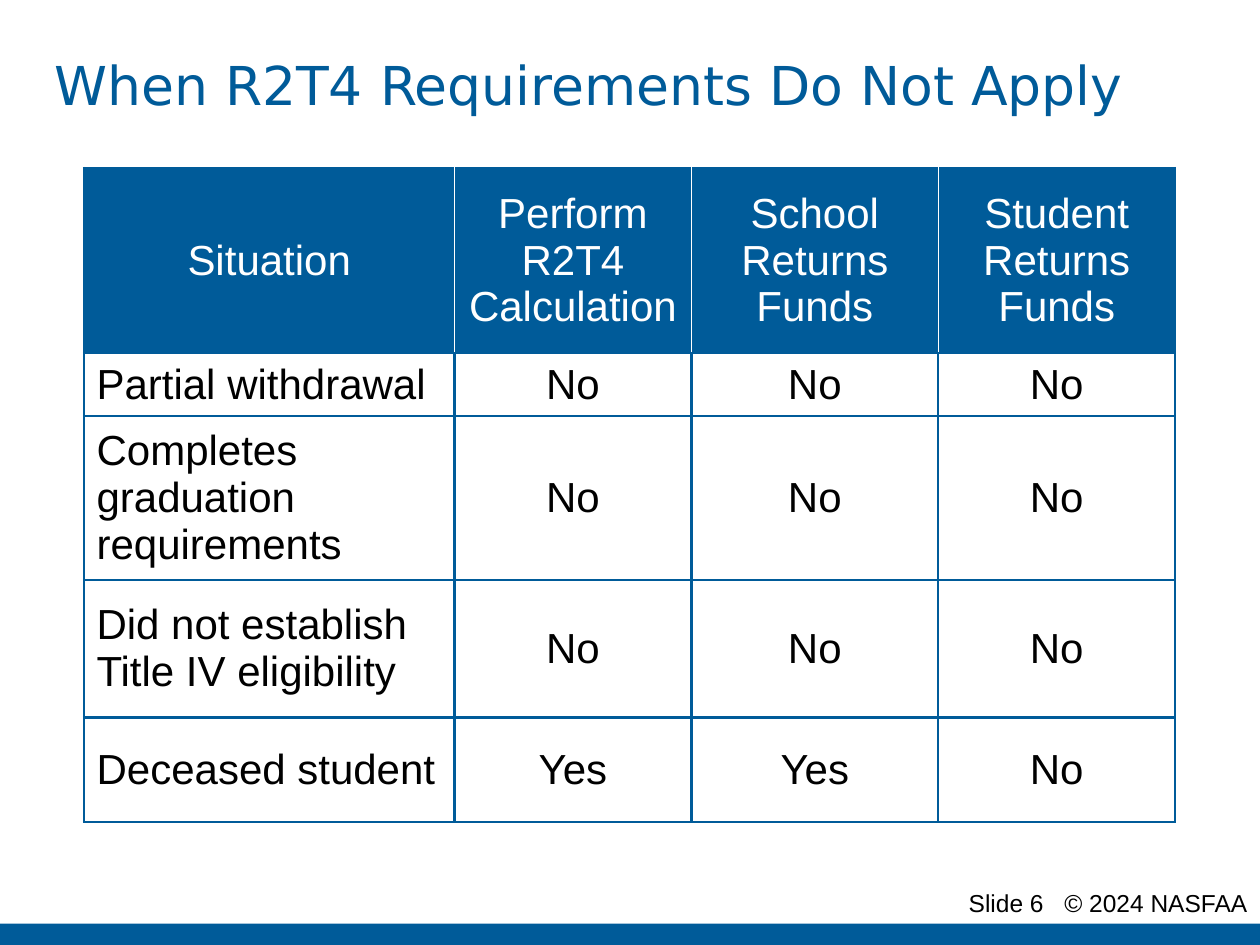
from lxml.etree import SubElement
from pptx import Presentation
from pptx.dml.color import RGBColor
from pptx.enum.shapes import MSO_SHAPE as Shape
from pptx.enum.text import MSO_ANCHOR as Anchor, PP_ALIGN as Align
from pptx.oxml.ns import qn
from pptx.util import Pt

BLUE = RGBColor(0x00, 0x5B, 0x99)
WHITE = RGBColor(0xFF, 0xFF, 0xFF)
BLACK = RGBColor(0x00, 0x00, 0x00)

COLS = [211.7, 135.4, 141.1, 135.4]
ROWS = [105.8, 34, 87.4, 78.5, 59.8]
CELLS = [
    ["Situation", "Perform R2T4 Calculation", "School Returns Funds",
     "Student Returns Funds"],
    ["Partial withdrawal", "No", "No", "No"],
    ["Completes graduation requirements", "No", "No", "No"],
    ["Did not establish Title IV eligibility", "No", "No", "No"],
    ["Deceased student", "Yes", "Yes", "No"],
]


def style(para, size, color, name="Arial", align=Align.LEFT):
    """Set the font and alignment of a paragraph."""
    para.alignment = align
    font = para.font
    font.size, font.name = Pt(size), name
    font.color.rgb = color


def add_text(slide, box, parts, anchor=Anchor.TOP):
    """Add a wrapped text box of runs and return its paragraph."""
    frame = slide.shapes.add_textbox(*map(Pt, box)).text_frame
    frame.word_wrap = True
    frame.vertical_anchor = anchor
    para = frame.paragraphs[0]
    for part in parts:
        para.add_run().text = part
    return para


def add_title(slide, box):
    """Add the slide title."""
    para = add_text(slide, box, ["When R2T4 Requirements Do Not Apply"],
                    Anchor.MIDDLE)
    style(para, 30.6, BLUE, "DejaVu Sans")


def add_footer(slide, left, top, width, height):
    """Add the slide number line and the bar at the foot of the box."""
    thick = 12.2
    bar = slide.shapes.add_shape(Shape.RECTANGLE, Pt(left),
                                 Pt(top + height - thick), Pt(width), Pt(thick))
    bar.shadow.inherit = False
    bar.fill.solid()
    bar.fill.fore_color.rgb = BLUE
    bar.line.fill.background()
    wide = 216
    para = add_text(slide, (left + width - wide, top, wide, 18),
                    ["Slide 6", " ", "© 2024 NASFAA"])
    para.runs[1].font._element.set("spc", "780")
    style(para, 14, BLACK, align=Align.RIGHT)


def add_edge(cell, side, color, width):
    """Draw one border of a cell."""
    line = SubElement(cell._tc.get_or_add_tcPr(), qn("a:ln" + side),
                      w=str(Pt(width)))
    fill = SubElement(line, qn("a:solidFill"))
    SubElement(fill, qn("a:srgbClr"), val=str(color))


def add_grid(slide, left, top):
    """Add the table of situations."""
    grid = slide.shapes.add_table(len(ROWS), len(COLS), Pt(left), Pt(top),
                                  Pt(sum(COLS)), Pt(sum(ROWS))).table
    for col, width in zip(grid.columns, COLS):
        col.width = Pt(width)
    for row, height in zip(grid.rows, ROWS):
        row.height = Pt(height)
    last = len(COLS) - 1
    for i, row in enumerate(CELLS):
        for j, text in enumerate(row):
            cell, head = grid.cell(i, j), i == 0
            cell.text = text
            cell.vertical_anchor = Anchor.MIDDLE
            align = Align.CENTER if head or j else Align.LEFT
            style(cell.text_frame.paragraphs[0], 24,
                  WHITE if head else BLACK, align=align)
            inner = {"L": head and j > 0, "R": head and j < last}
            for side in "LRTB":
                pen = (WHITE, 1) if inner.get(side) else (BLUE, 1.5)
                add_edge(cell, side, *pen)
            cell.fill.solid()
            cell.fill.fore_color.rgb = BLUE if head else WHITE


def main():
    """Build and save the slide."""
    deck = Presentation()
    deck.slide_width, deck.slide_height = Pt(720), Pt(540)
    slide = deck.slides.add_slide(deck.slide_layouts[6])
    add_footer(slide, 0, 504, 720, 36)
    add_title(slide, (24, 12, 669.6, 72))
    add_grid(slide, 48, 96)
    deck.save("out.pptx")


if __name__ == "__main__":
    main()
